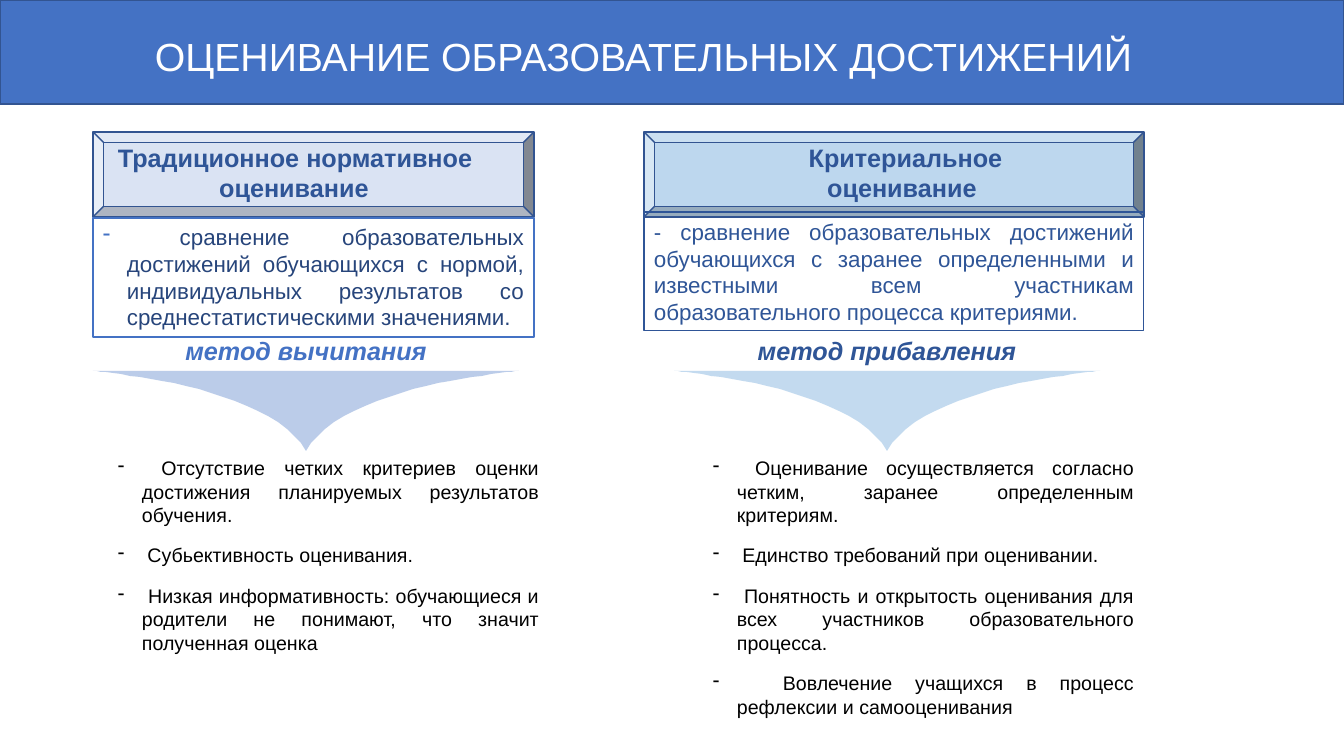
from lxml.etree import SubElement
from pptx import Presentation
from pptx.dml.color import RGBColor
from pptx.enum.shapes import MSO_SHAPE
from pptx.enum.text import MSO_ANCHOR, PP_ALIGN
from pptx.oxml.ns import qn
from pptx.util import Emu, Pt

SLIDE_W, SLIDE_H = 1344, 756
EMU_PER_PX = 12192000 / SLIDE_W
BULLET_INDENT = 24

WHITE = RGBColor(0xFF, 0xFF, 0xFF)
BLACK = RGBColor(0x00, 0x00, 0x00)
BLUE = RGBColor(0x44, 0x72, 0xC4)
OUTLINE = RGBColor(0x32, 0x54, 0x91)
DARK_BLUE = RGBColor(0x2F, 0x55, 0x97)
NAVY = RGBColor(0x27, 0x45, 0x7B)
PALE_LILAC = RGBColor(0xDA, 0xE3, 0xF3)
LILAC = RGBColor(0xB4, 0xC7, 0xE7)
SKY = RGBColor(0xBD, 0xD7, 0xEE)


def px(length):
    return Emu(round(length * EMU_PER_PX))


def add_panel(slide, preset, box, line, fill=None, line_width=1):
    panel = slide.shapes.add_shape(preset, *map(px, box))
    panel.shadow.inherit = False
    if fill is None:
        panel.fill.background()
    else:
        panel.fill.solid()
        panel.fill.fore_color.rgb = fill
    panel.line.color.rgb = line
    panel.line.width = Pt(line_width)
    return panel


def set_dash_bullet(paragraph):
    properties = paragraph._p.get_or_add_pPr()
    properties.set("marL", str(px(BULLET_INDENT)))
    properties.set("indent", str(-px(BULLET_INDENT)))
    SubElement(properties, qn("a:buChar")).set("char", "-")


def write(shape, lines, size, color, align=PP_ALIGN.CENTER, anchor=MSO_ANCHOR.TOP,
          bold=False, italic=False, dashed=False, gap=0):
    """Fill a shape with one paragraph per line, all in one style."""
    frame = shape.text_frame
    frame.word_wrap = True
    frame.vertical_anchor = anchor
    for index, line in enumerate(lines):
        paragraph = frame.add_paragraph() if index else frame.paragraphs[0]
        paragraph.text = line
        paragraph.alignment = align
        if index and gap:
            paragraph.space_before = Pt(gap)
        if dashed:
            set_dash_bullet(paragraph)
        font = paragraph.font
        font.name, font.size, font.color.rgb = "Arial", Pt(size), color
        font.bold, font.italic = bold, italic
    return frame.paragraphs


def add_text(slide, box, lines, size, color, **style):
    return write(slide.shapes.add_textbox(*map(px, box)), lines, size, color, **style)


def bezier(start, control_1, control_2, end, steps=24):
    for step in range(1, steps + 1):
        t = step / steps
        u = 1 - t
        yield tuple(u**3 * a + 3 * u * u * t * b + 3 * u * t * t * c + t**3 * d
                    for a, b, c, d in zip(start, control_1, control_2, end))


def add_funnel(slide, left, color):
    """Draw a downward pointer with two concave sides."""
    top, bottom = 371, 451
    right, middle = left + 426, left + 213
    corner, tip, far_corner = (left, top), (middle, bottom), (right, top)
    outline = [*bezier(corner, corner, (middle - 35, top + 14), tip),
               *bezier(tip, (middle + 35, top + 14), far_corner, far_corner)]
    builder = slide.shapes.build_freeform(left, top, scale=EMU_PER_PX)
    builder.add_line_segments(outline, close=True)
    funnel = builder.convert_to_shape()
    funnel.shadow.inherit = False
    funnel.line.fill.background()
    funnel.fill.solid()
    funnel.fill.fore_color.rgb = color
    rgb = funnel._element.spPr.find(qn("a:solidFill")).find(qn("a:srgbClr"))
    SubElement(rgb, qn("a:alpha")).set("val", "90000")


def add_method(slide, left, name, text_color, funnel_color):
    add_text(slide, (left, 330, 426, 40), [name], 18, text_color, bold=True, italic=True)
    add_funnel(slide, left, funnel_color)


def add_points(slide, left, height, points):
    add_text(slide, (left, 451, 441, height), points, 14, BLACK,
             align=PP_ALIGN.JUSTIFY, dashed=True, gap=12)


def add_title(slide):
    add_panel(slide, MSO_SHAPE.RECTANGLE, (0, 0, SLIDE_W, 104), OUTLINE, BLUE)
    title, = add_text(slide, (64, 24, 1159, 70), ["ОЦЕНИВАНИЕ ОБРАЗОВАТЕЛЬНЫХ ДОСТИЖЕНИЙ"],
                      28, WHITE, anchor=MSO_ANCHOR.MIDDLE)
    title.line_spacing = 0.9


def add_traditional(slide):
    add_panel(slide, MSO_SHAPE.BEVEL, (93, 132, 441, 85), OUTLINE, PALE_LILAC)
    heading = add_text(slide, (108, 137, 379, 72), ["Традиционное нормативное", "оценивание "],
                       18, DARK_BLUE, bold=True)
    heading[0].alignment = PP_ALIGN.LEFT

    definition = add_panel(slide, MSO_SHAPE.RECTANGLE, (93, 218, 441, 119), BLUE)
    paragraph, = write(definition, [" "], 16, BLUE, align=PP_ALIGN.JUSTIFY, dashed=True)
    paragraph.runs[0].font.color.rgb = BLUE
    statement = paragraph.add_run()
    statement.text = ("сравнение образовательных достижений обучающихся с нормой, "
                      "индивидуальных результатов со среднестатистическими значениями.")
    statement.font.color.rgb = NAVY

    add_method(slide, 93, "метод вычитания", BLUE, LILAC)
    add_points(slide, 108, 211, [
        " Отсутствие четких критериев оценки достижения планируемых результатов обучения.",
        " Субьективность оценивания. ",
        " Низкая информативность: обучающиеся и родители не понимают, "
        "что значит полученная оценка",
    ])


def add_criterial(slide):
    add_panel(slide, MSO_SHAPE.BEVEL, (644, 132, 500, 85), OUTLINE, SKY)
    add_text(slide, (736, 137, 339, 72), ["Критериальное оценивание "],
             18, DARK_BLUE, bold=True)

    definition = add_panel(slide, MSO_SHAPE.RECTANGLE, (644, 212, 500, 119), DARK_BLUE,
                           line_width=0.75)
    write(definition, ["- сравнение образовательных достижений обучающихся с заранее "
                       "определенными и известными всем участникам образовательного "
                       "процесса критериями."],
          16, DARK_BLUE, align=PP_ALIGN.JUSTIFY, anchor=MSO_ANCHOR.MIDDLE)

    add_method(slide, 674, "метод прибавления", DARK_BLUE, SKY)
    add_points(slide, 703, 228, [
        " Оценивание осуществляется согласно четким, заранее определенным критериям. ",
        " Единство требований при оценивании. ",
        " Понятность и открытость оценивания для всех участников образовательного процесса.",
        "  Вовлечение учащихся в процесс рефлексии и самооценивания",
    ])


def main():
    presentation = Presentation()
    presentation.slide_width, presentation.slide_height = px(SLIDE_W), px(SLIDE_H)
    slide = presentation.slides.add_slide(presentation.slide_layouts[6])
    add_title(slide)
    add_traditional(slide)
    add_criterial(slide)
    presentation.save("out.pptx")


if __name__ == "__main__":
    main()
